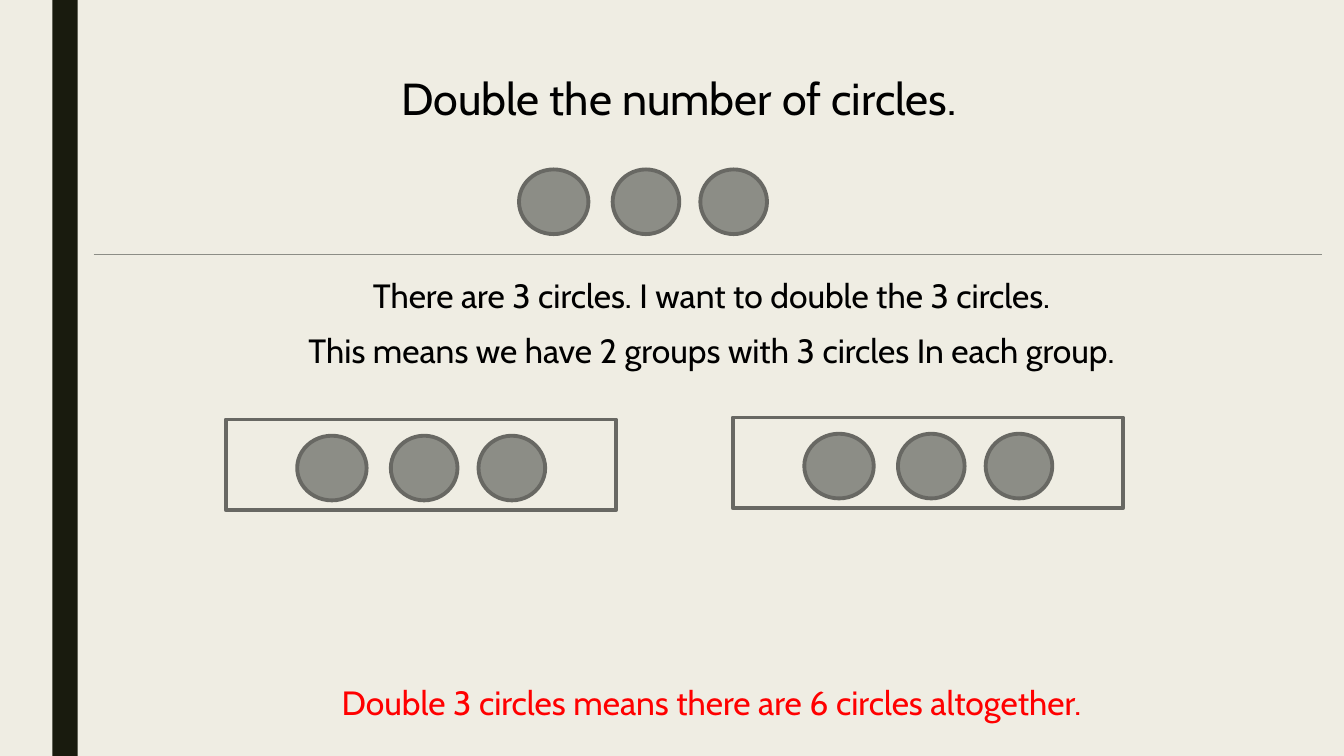
import pptx
import pptx.util
import pptx.dml.color
import pptx.enum.shapes
import pptx.enum.text
import pptx.oxml

Cm = pptx.util.Cm
Pt = pptx.util.Pt
SHAPE = pptx.enum.shapes.MSO_SHAPE
ALIGN = pptx.enum.text.PP_ALIGN

COLORS = {
    "paper": "EFEDE3",
    "bar": "191B0E",
    "disc": "8C8D86",
    "edge": "686863",
    "text": "000000",
    "answer": "FF0000",
}
# Left offset and width of each circle in a row
DISCS = [(0, 1.75), (2.36, 1.68), (4.57, 1.68)]


def color(name):
    return pptx.dml.color.RGBColor.from_string(COLORS[name])


def add_form(shapes, kind, box, fill=None, edge=None):
    form = shapes.add_shape(kind, *map(Cm, box))
    form.shadow.inherit = False
    if fill:
        form.fill.solid()
        form.fill.fore_color.rgb = color(fill)
    else:
        form.fill.background()
    if edge:
        form.line.color.rgb = color(edge)
        form.line.width = Pt(2.75)
    else:
        form.line.fill.background()


def add_row(shapes, left, top):
    for shift, width in DISCS:
        box = (left + shift, top, width, 1.63)
        add_form(shapes, SHAPE.OVAL, box, "disc", "edge")


def add_frame(slide, left, top):
    group = slide.shapes.add_group_shape()
    add_form(group.shapes, SHAPE.RECTANGLE, (left, top, 9.83, 2.29), edge="edge")
    add_row(group.shapes, left + 1.8, top + 0.41)


def add_text(slide, text, box, size=24, ink="text", align=ALIGN.CENTER, wrap=True):
    frame = slide.shapes.add_textbox(*map(Cm, box)).text_frame
    frame.word_wrap = wrap
    frame.auto_size = pptx.enum.text.MSO_AUTO_SIZE.SHAPE_TO_FIT_TEXT
    frame.text = text
    para = frame.paragraphs[0]
    para.alignment = align
    font = para.runs[0].font
    font.name = "Cabin"
    font.size = Pt(size)
    font.color.rgb = color(ink)


def add_rule(slide, left, right, top):
    rule = slide.shapes.add_connector(
        pptx.enum.shapes.MSO_CONNECTOR.STRAIGHT,
        Cm(left), Cm(top), Cm(right), Cm(top))
    rule.line.color.rgb = color("disc")
    rule.line.width = Pt(0.5)
    rule._element.spPr.append(pptx.oxml.parse_xml(
        '<a:effectLst xmlns:a="http://schemas.openxmlformats.org/drawingml/2006/main"/>'))


def main():
    deck = pptx.Presentation()
    deck.slide_width = Cm(33.87)
    deck.slide_height = Cm(19.05)
    slide = deck.slides.add_slide(deck.slide_layouts[6])
    slide.background.fill.solid()
    slide.background.fill.fore_color.rgb = color("paper")

    # Side bar, title and dividing line
    add_form(slide.shapes, SHAPE.RECTANGLE, (1.32, 0, 0.64, 19.05), "bar")
    add_text(slide, "Double the number of circles.", (9.86, 1.65, 14.94, 1.63),
             size=32, align=ALIGN.LEFT, wrap=False)
    add_rule(slide, 2.36, 33.32, 6.4)

    # Explanation and answer
    lines = [
        ("There are 3 circles. I want to double the 3 circles. ", 6.81, "text"),
        ("This means we have 2 groups with 3 circles In each group. ", 8.18, "text"),
        ("Double 3 circles means there are 6 circles altogether. ", 17.07, "answer"),
    ]
    for text, top, ink in lines:
        add_text(slide, text, (2.74, top, 30.58, 1.27), ink=ink)

    # Starting circles, then the two equal groups
    start = slide.shapes.add_group_shape()
    add_row(start.shapes, 13.08, 4.27)
    add_frame(slide, 18.47, 10.52)
    add_frame(slide, 5.69, 10.57)

    deck.save("out.pptx")


if __name__ == "__main__":
    main()
